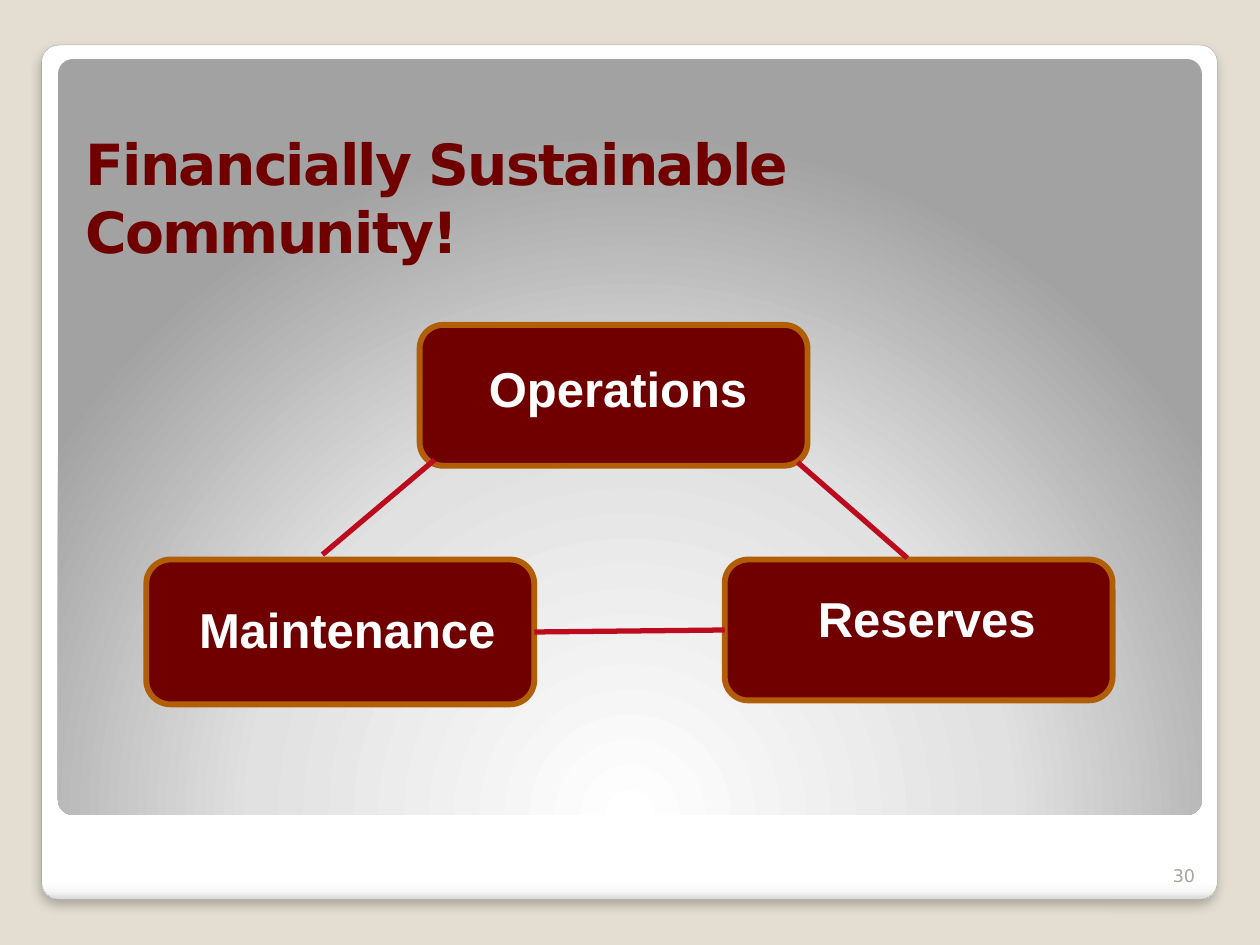
"""Build the Financially Sustainable Community slide: three linked boxes on a framed panel."""
from pptx import Presentation
from pptx.dml.color import RGBColor
from pptx.enum.shapes import MSO_CONNECTOR, MSO_SHAPE
from pptx.enum.text import MSO_ANCHOR, MSO_AUTO_SIZE, PP_ALIGN
from pptx.oxml import parse_xml
from pptx.oxml.ns import nsdecls, qn
from pptx.util import Cm, Pt

ROUNDED = MSO_SHAPE.ROUNDED_RECTANGLE
STRAIGHT = MSO_CONNECTOR.STRAIGHT
LEFT, CENTER, RIGHT = PP_ALIGN.LEFT, PP_ALIGN.CENTER, PP_ALIGN.RIGHT
TOP, BOTTOM = MSO_ANCHOR.TOP, MSO_ANCHOR.BOTTOM
NO_FIT = MSO_AUTO_SIZE.NONE

SAND = RGBColor(0xE3, 0xDE, 0xD1)
MAROON = RGBColor(0x70, 0x00, 0x00)
ORANGE = RGBColor(0xB2, 0x5E, 0x07)
RED = RGBColor(0xBC, 0x0B, 0x1F)
WHITE = RGBColor(0xFF, 0xFF, 0xFF)
GREY = RGBColor(0xA4, 0xA4, 0xA4)
NUMBER_GREY = RGBColor(0xA8, 0xA4, 0x9B)

TITLE = "Financially Sustainable Community!"
TITLE_AT = (1.47, 2.92, 22.43, 2.54)
PAGE = "30"
PAGE_AT = (23.07, 16.97, 1.27, 1.02)

FRAME_AT = (0.84, 0.91, 23.7, 17.22)
FRAME_STOPS = [(0, "FFFFFF"), (98, "FFFFFF"), (99, "F7F7F7"), (100, "DADADA")]
FRAME_SHADE = '<a:lin ang="5400000" scaled="0"/>'
PANEL_AT = (1.17, 1.19, 23.06, 15.24)
PANEL_STOPS = [(0, "FFFFFF"), (55, "E1E1E1"), (100, "A2A2A2")]
PANEL_SHADE = ('<a:path path="circle"><a:fillToRect l="50000" t="175000" '
               'r="50000" b="-75000"/></a:path>')

BOX_W = 7.82
LABEL_W, LABEL_H = 7.16, 1.45
BOXES = [
    ("Operations", (8.46, 6.55), 2.84, (8.88, 7.11)),
    ("Maintenance", (2.95, 11.28), 2.92, (3.42, 11.96)),
    ("Reserves", (14.61, 11.28), 2.84, (15.1, 11.73)),
]
SIDES = [
    (16.08, 9.32, 18.29, 11.25),
    (8.76, 9.27, 6.5, 11.18),
]


def cm(values):
    return [Cm(v) for v in values]


def add_rounded(s, at):
    sp = s.shapes.add_shape(ROUNDED, *cm(at))
    sp.shadow.inherit = False
    return sp


def add_backdrop(s, at, stops, shade):
    sp = add_rounded(s, at)
    sp.adjustments[0] = 0.02
    sp.line.fill.background()
    sp.fill.background()
    gs = "".join(f'<a:gs pos="{pos * 1000}"><a:srgbClr val="{color}"/></a:gs>'
                 for pos, color in stops)
    spPr = sp.element.spPr
    spPr.replace(spPr.find(qn("a:noFill")), parse_xml(
        f'<a:gradFill {nsdecls("a")} rotWithShape="1"><a:gsLst>{gs}</a:gsLst>{shade}</a:gradFill>'))
    s.shapes.title.element.addprevious(sp.element)
    return sp


def write(sp, text, size, font, color, align=LEFT, anchor=TOP, bold=False):
    tf = sp.text_frame
    tf.text = text
    tf.word_wrap = True
    tf.auto_size = NO_FIT
    tf.vertical_anchor = anchor
    p = tf.paragraphs[0]
    p.alignment = align
    r = p.runs[0]
    r.font.size = Pt(size)
    r.font.name = font
    r.font.bold = bold
    r.font.color.rgb = color
    return r


def add_link(s, points):
    line = s.shapes.add_connector(STRAIGHT, *cm(points))
    line.line.color.rgb = RED
    line.line.width = Pt(3)
    line.element.spPr.append(parse_xml(f'<a:effectLst {nsdecls("a")}/>'))
    return line


def main():
    prs = Presentation()
    prs.slide_width, prs.slide_height = Cm(25.4), Cm(19.05)
    s = prs.slides.add_slide(prs.slide_layouts[5])
    s.background.fill.solid()
    s.background.fill.fore_color.rgb = SAND

    frame = add_backdrop(s, FRAME_AT, FRAME_STOPS, FRAME_SHADE)
    frame.line.color.rgb = GREY
    frame.line.width = Pt(0.16)
    frame.element.spPr.find(qn("a:effectLst")).append(parse_xml(
        f'<a:outerShdw {nsdecls("a")} blurRad="{Pt(6)}" dist="{Pt(4)}" dir="5400000" '
        'algn="tl" rotWithShape="0"><a:srgbClr val="000000"><a:alpha val="25000"/>'
        '</a:srgbClr></a:outerShdw>'))
    add_backdrop(s, PANEL_AT, PANEL_STOPS, PANEL_SHADE)

    title = s.shapes.title
    title.left, title.top, title.width, title.height = cm(TITLE_AT)
    r = write(title, TITLE, 32.4, "DejaVu Sans", MAROON, anchor=BOTTOM, bold=True)
    r.font.element.set("spc", "-100") if hasattr(r.font, "element") else r.font._element.set("spc", "-100")

    number = s.shapes.add_textbox(*cm(PAGE_AT))
    write(number, PAGE, 10, "DejaVu Sans", NUMBER_GREY, RIGHT, BOTTOM)

    boxes = {}
    for name, corner, height, label_corner in BOXES:
        box = boxes[name] = add_rounded(s, (*corner, BOX_W, height))
        box.fill.solid()
        box.fill.fore_color.rgb = MAROON
        box.line.color.rgb = ORANGE
        box.line.width = Pt(3.35)
        label = s.shapes.add_textbox(*cm((*label_corner, LABEL_W, LABEL_H)))
        write(label, name, 28, "Arial", WHITE, CENTER, bold=True)

    for points in SIDES:
        add_link(s, points)
    base = add_link(s, (0, 0, 0, 0))
    base.begin_connect(boxes["Maintenance"], 3)
    base.end_connect(boxes["Reserves"], 1)

    prs.save("out.pptx")


if __name__ == "__main__":
    main()
